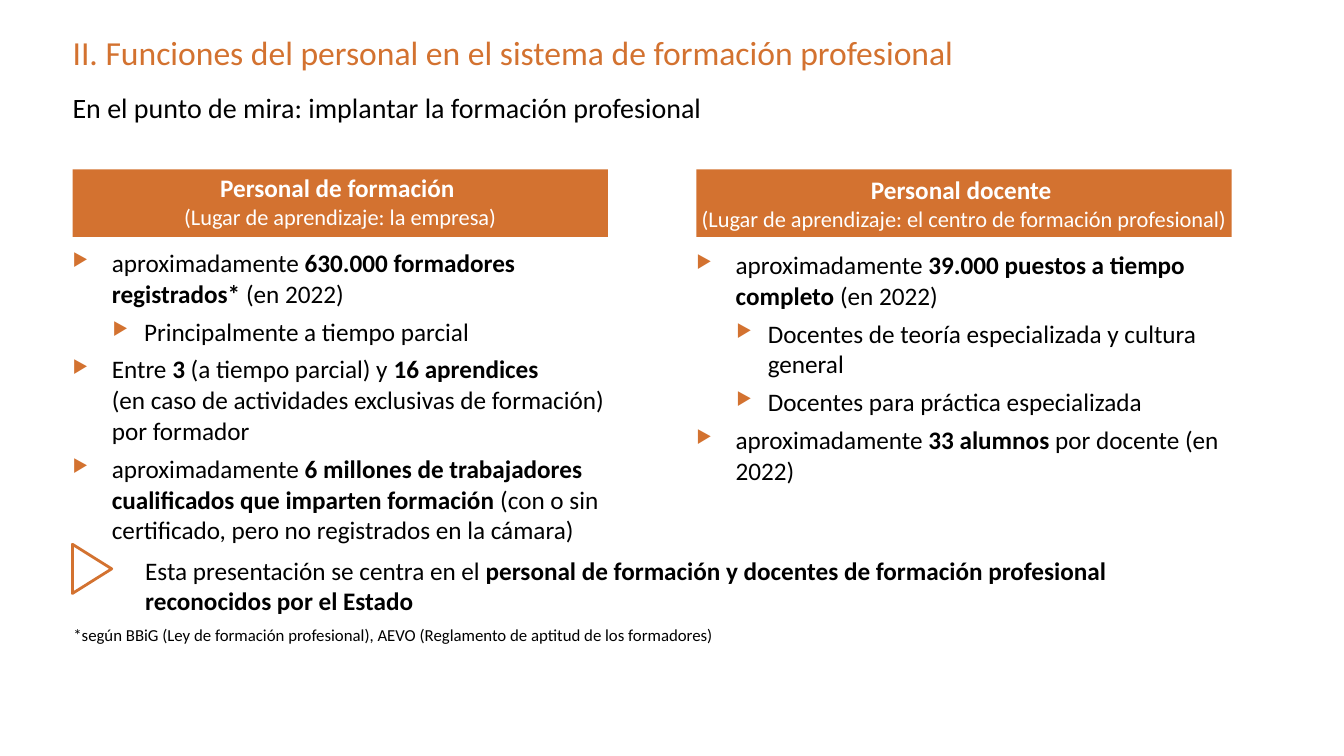
from lxml import etree
from pptx import Presentation
from pptx.dml.color import RGBColor
from pptx.enum import shapes, text
from pptx.oxml import ns
from pptx.util import Cm, Pt

ORANGE = RGBColor(0xD3, 0x72, 0x30)
BLACK = RGBColor(0, 0, 0)
WHITE = RGBColor(0xFF, 0xFF, 0xFF)
FONT = "Calibri"

LEFT, RIGHT = 1.83, 17.55
WIDTH = 13.49
LEVELS = [(0.99, 0.99), (1.8, 0.79)]  # text indent, bullet hang

# Bars mark the bold parts
TRAINERS = [
    (0, "aproximadamente |630.000 formadores registrados* |(en 2022)"),
    (1, "Principalmente a tiempo parcial"),
    (0, "Entre |3| (a tiempo parcial) y |16 aprendices \n|"
        "(en caso de actividades exclusivas de formación) \npor formador"),
    (0, "aproximadamente |6 millones de trabajadores cualificados que imparten "
        "formación| (con o sin certificado, pero no registrados en la cámara)"),
]
TEACHERS = [
    (0, "aproximadamente |39.000 puestos a tiempo completo| (en 2022)"),
    (1, "Docentes de teoría especializada y cultura general"),
    (1, "Docentes para práctica especializada"),
    (0, "aproximadamente |33 alumnos| por docente (en 2022)"),
]


def write(par, words, size=18, color=BLACK, align=text.PP_ALIGN.LEFT):
    """Fill a paragraph; text between bars is bold."""
    par.alignment = align
    par.font.size = Pt(size)
    for i, part in enumerate(words.split("|")):
        for j, line in enumerate(part.split("\n")):
            if j:
                par.add_line_break()
            if line:
                run = par.add_run()
                run.text = line
                font = run.font
                font.name, font.size, font.bold = FONT, Pt(size), i % 2 == 1
                font.color.rgb = color


def setup(frame, inset=(0, 0), anchor=text.MSO_ANCHOR.TOP):
    frame.word_wrap = True
    frame.auto_size = text.MSO_AUTO_SIZE.NONE
    frame.vertical_anchor = anchor
    frame.margin_left = frame.margin_right = Cm(inset[0])
    frame.margin_top = frame.margin_bottom = Cm(inset[1])
    return frame


def add_box(slide, spot, inset=(0, 0)):
    box = slide.shapes.add_textbox(*map(Cm, spot))
    return setup(box.text_frame, inset)


def add_label(slide, spot, words, inset=(0, 0), **style):
    write(add_box(slide, spot, inset).paragraphs[0], words, **style)


def add_title(slide, spot, words):
    title = slide.shapes.title
    title.left, title.top, title.width, title.height = map(Cm, spot)
    write(setup(title.text_frame).paragraphs[0], words, size=24, color=ORANGE)


def add_head(slide, left, name, place, space=1.0):
    head = slide.shapes.add_shape(shapes.MSO_SHAPE.RECTANGLE, Cm(left), Cm(4.27),
                                  Cm(WIDTH), Cm(1.7))
    head.shadow.inherit = False
    head.fill.solid()
    head.fill.fore_color.rgb = ORANGE
    head.line.fill.background()
    frame = setup(head.text_frame, anchor=text.MSO_ANCHOR.MIDDLE)
    first = frame.paragraphs[0]
    first.line_spacing = space
    style = {"color": WHITE, "align": text.PP_ALIGN.CENTER}
    write(first, f"|{name}|", **style)
    write(frame.add_paragraph(), place, size=16, **style)


def add_mark(par, level):
    """Give a paragraph its triangular bullet and hanging indent."""
    props = par._p.get_or_add_pPr()
    indent, hang = LEVELS[level]
    props.set("marL", str(Cm(indent)))
    props.set("indent", str(-Cm(hang)))
    tint = etree.SubElement(props, ns.qn("a:buClr"))
    etree.SubElement(tint, ns.qn("a:srgbClr"), val=str(ORANGE))
    etree.SubElement(props, ns.qn("a:buSzPct"), val="70000")
    etree.SubElement(props, ns.qn("a:buChar"), char="▶")


def add_list(slide, spot, items):
    frame = add_box(slide, spot)
    for i, (level, words) in enumerate(items):
        par = frame.add_paragraph() if i else frame.paragraphs[0]
        add_mark(par, level)
        par.level = level
        par.line_spacing = Pt(22)
        par.space_before = Pt(5 if i else 0)
        write(par, words)


def add_arrow(slide, spot):
    arrow = slide.shapes.add_shape(shapes.MSO_SHAPE.ISOSCELES_TRIANGLE,
                                   *map(Cm, spot))
    arrow.rotation = 90
    arrow.shadow.inherit = False
    arrow.fill.background()
    arrow.line.color.rgb = ORANGE
    arrow.line.width = Pt(2)


def main():
    deck = Presentation()
    deck.slide_width, deck.slide_height = Cm(33.87), Cm(19.05)
    slide = deck.slides.add_slide(deck.slide_layouts.get_by_name("Title Only"))

    # Title and subtitle
    add_title(slide, (LEFT, 0.81, 24.99, 1.24),
              "II. Funciones del personal en el sistema de formación profesional")
    add_label(slide, (LEFT, 2.29, 30.71, 1.22),
              "En el punto de mira: implantar la formación profesional", size=20)

    # Company trainers
    add_head(slide, LEFT, "Personal de formación ",
             "(Lugar de aprendizaje: la empresa)", space=0.9)
    add_list(slide, (LEFT, 6.22, 13.69, 6.96), TRAINERS)

    # School teachers
    add_head(slide, RIGHT, "Personal docente ",
             "(Lugar de aprendizaje: el centro de formación profesional)")
    add_list(slide, (RIGHT, 6.27, WIDTH, 5.99), TEACHERS)

    # Conclusion and footnote
    add_label(slide, (3.66, 14, 27.53, 0.58),
              "Esta presentación se centra en el |personal de formación y docentes "
              "de formación profesional reconocidos por el Estado|")
    add_label(slide, (1.6, 15.62, 18.16, 0.76),
              "*según BBiG (Ley de formación profesional), AEVO (Reglamento de "
              "aptitud de los formadores)", inset=(0.25, 0.13), size=12)
    add_arrow(slide, (1.7, 13.84, 1.24, 0.99))

    deck.save("out.pptx")


if __name__ == "__main__":
    main()
